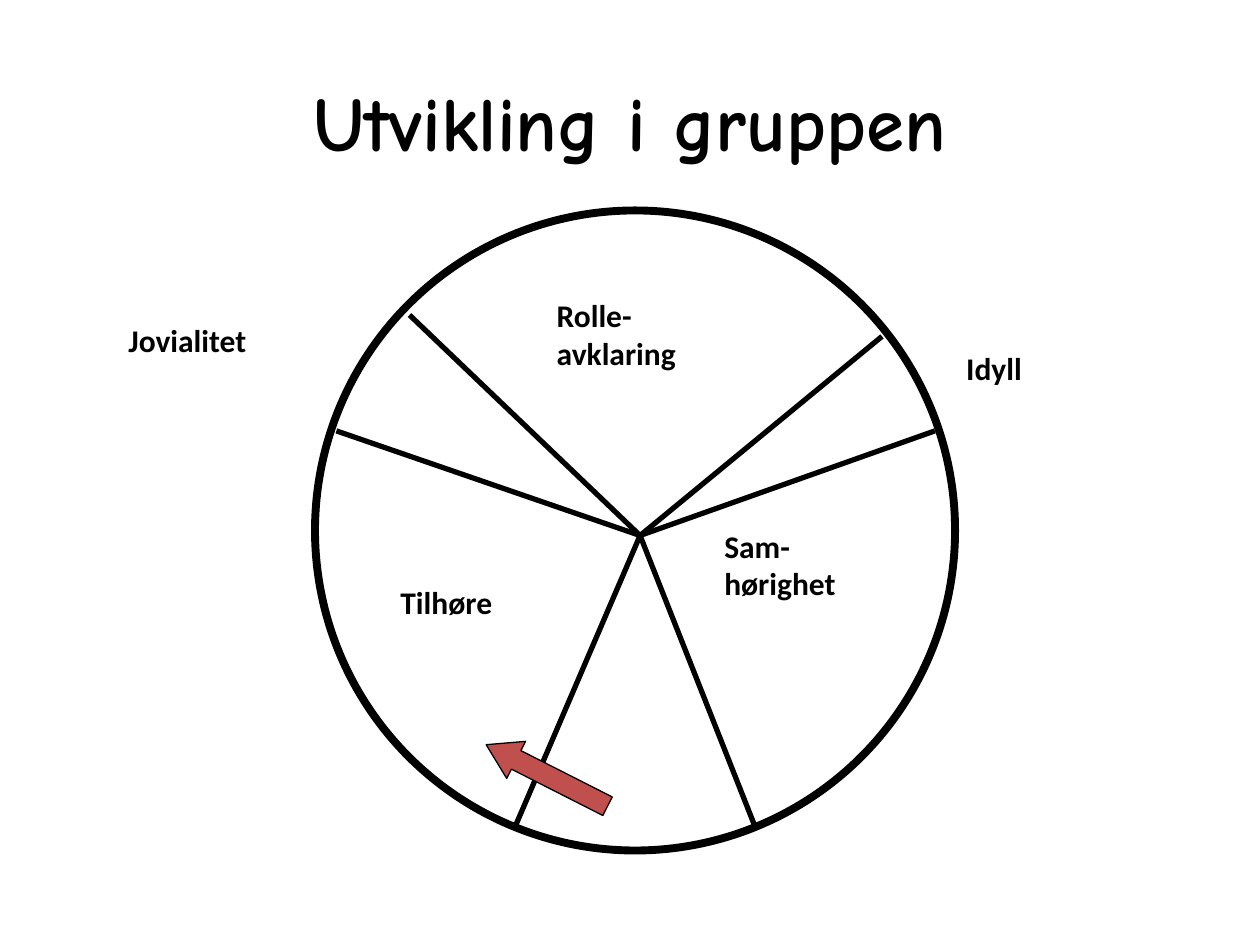
from lxml import etree
from pptx import Presentation
from pptx.dml.color import RGBColor
from pptx.enum.shapes import MSO_CONNECTOR, MSO_SHAPE
from pptx.enum.text import MSO_ANCHOR, PP_ALIGN
from pptx.oxml.ns import qn
from pptx.util import Inches, Pt

LINE = MSO_CONNECTOR.STRAIGHT
OVAL = MSO_SHAPE.OVAL
ARROW = MSO_SHAPE.LEFT_ARROW
MIDDLE = MSO_ANCHOR.MIDDLE
TOP = MSO_ANCHOR.TOP
CENTER = PP_ALIGN.CENTER
LEFT = PP_ALIGN.LEFT

HEX = {"ink": "000000", "arrow": "C0504D"}
HUB = (5.08, 4.25)
RIM = [(4.08, 6.58), (2.67, 3.42), (3.25, 2.5),
       (7, 2.67), (7.42, 3.42), (6, 6.58)]
LABELS = [
    (["Tilhøre"], (3.08, 4.58, 1.34, 0.5)),
    (["Rolle-", "avklaring"], (4.32, 2.3, 1.61, 0.9)),
    (["Jovialitet"], (0.92, 2.5, 1.72, 0.5)),
    (["Idyll"], (7.57, 2.72, 0.95, 0.5)),
    (["Sam-", "hørighet"], (5.65, 4.13, 1.54, 0.9)),
]


class Deck:
    head_font, body_font = "Comic Neue", "Calibri"
    head_size, body_size = 44, 18

    def __init__(self, slide):
        self.slide = slide
        self.shapes = slide.shapes

    def color(self, name):
        return RGBColor.from_string(HEX[name])

    def add_rows(self, frame, rows, font, size, align):
        for i, row in enumerate(rows):
            para = frame.paragraphs[0] if i == 0 else frame.add_paragraph()
            para.alignment = align
            run = para.add_run()
            run.text = row
            run.font.name = font
            run.font.size = Pt(size)
            run.font.bold = True
            run.font.color.rgb = self.color("ink")

    def stroke(self, item, width):
        item.line.color.rgb = self.color("ink")
        item.line.width = Pt(width)

    def title(self, text, box):
        head = self.shapes.title
        head.left, head.top, head.width, head.height = map(Inches, box)
        head.text_frame.vertical_anchor = MIDDLE
        self.add_rows(head.text_frame, [text], self.head_font,
                      self.head_size, CENTER)

    def label(self, rows, box):
        frame = self.shapes.add_textbox(*map(Inches, box)).text_frame
        frame.word_wrap = True
        frame.vertical_anchor = TOP
        self.add_rows(frame, rows, self.body_font, self.body_size, LEFT)

    def shape(self, kind, box, width, fill=None):
        item = self.shapes.add_shape(kind, *map(Inches, box))
        item.shadow.inherit = False
        if fill:
            item.fill.solid()
            item.fill.fore_color.rgb = self.color(fill)
        else:
            item.fill.background()
        self.stroke(item, width)
        return item

    def spoke(self, start, end):
        item = self.shapes.add_connector(LINE, *map(Inches, start + end))
        self.stroke(item, 3)
        etree.SubElement(item._element.spPr, qn("a:effectLst"))


def main():
    prs = Presentation()
    prs.slide_width, prs.slide_height = Inches(10), Inches(7.5)
    deck = Deck(prs.slides.add_slide(prs.slide_layouts[5]))

    # Title
    deck.title("Utvikling i gruppen", (0.75, 0.33, 8.5, 1.25))

    # Wheel and its spokes
    deck.shape(OVAL, (2.5, 1.67, 5.08, 5.08), 4.5)
    for end in RIM:
        deck.spoke(HUB, end)

    # Phase names
    for rows, box in LABELS:
        deck.label(rows, box)

    # Arrow into the first phase
    arrow = deck.shape(ARROW, (3.8, 5.99, 1.08, 0.33), 0.75, "arrow")
    arrow.rotation = 26.9
    arrow.adjustments[0] = 0.5
    arrow.adjustments[1] = 0.81

    prs.save("out.pptx")


if __name__ == "__main__":
    main()
